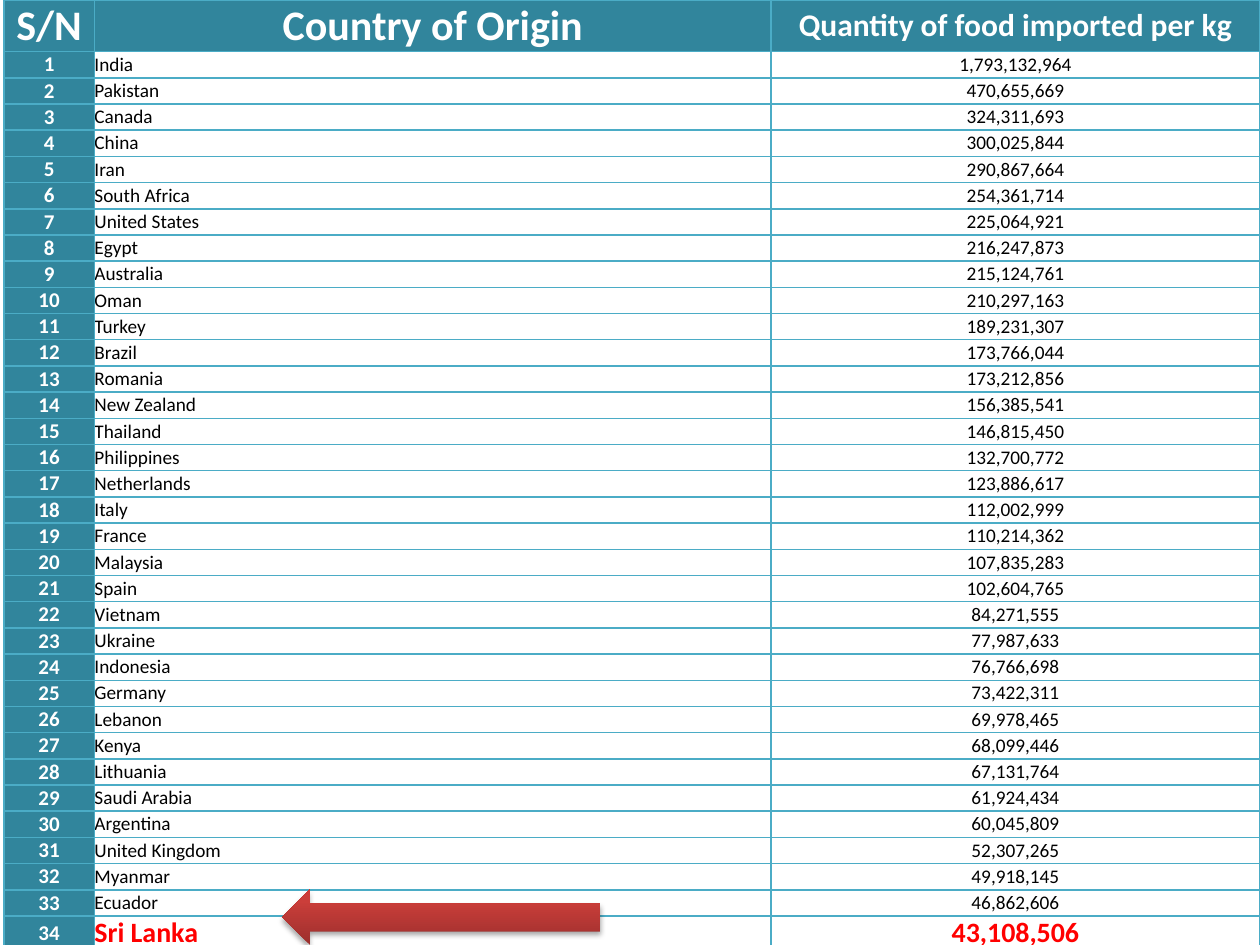
from dataclasses import dataclass

from pptx import Presentation
from pptx.dml.color import RGBColor
from pptx.enum.shapes import MSO_SHAPE
from pptx.enum.text import MSO_ANCHOR, PP_ALIGN
from pptx.oxml import parse_xml
from pptx.oxml.ns import nsdecls
from pptx.slide import Slide
from pptx.table import _Cell
from pptx.util import Inches, Pt

LEFT_ARROW = MSO_SHAPE.LEFT_ARROW
MIDDLE = MSO_ANCHOR.MIDDLE
LEFT, CENTER = PP_ALIGN.LEFT, PP_ALIGN.CENTER

FONT = "Calibri"
BLANK_LAYOUT = 6
COLORS = {
    "header": "31859C",
    "border": "4BACC6",
    "white": "FFFFFF",
    "black": "000000",
    "highlight": "FF0000",
}
ARROW_STOPS = {0: "9C2F2D", 80: "CB3E3A", 100: "CE3B37"}


@dataclass(frozen=True)
class CellStyle:
    size: int
    color: str
    bold: bool = False
    fill: str | None = None
    right_to_left: bool = False


@dataclass(frozen=True)
class Import:
    country: str
    kilograms: int


LARGE_HEADER = CellStyle(24, "white", True, "header", True)
SMALL_HEADER = CellStyle(18, "white", True, "header", True)
NUMBER = CellStyle(12, "white", True, "header")
BODY = CellStyle(11, "black")
HIGHLIGHT = CellStyle(16, "highlight", True)

HEADERS = [
    ("S/N", LARGE_HEADER),
    ("Country of Origin", LARGE_HEADER),
    ("Quantity of food imported per kg", SMALL_HEADER),
]
IMPORTS = [
    Import("India", 1793132964),
    Import("Pakistan", 470655669),
    Import("Canada", 324311693),
    Import("China", 300025844),
    Import("Iran", 290867664),
    Import("South Africa", 254361714),
    Import("United States", 225064921),
    Import("Egypt", 216247873),
    Import("Australia", 215124761),
    Import("Oman", 210297163),
    Import("Turkey", 189231307),
    Import("Brazil", 173766044),
    Import("Romania", 173212856),
    Import("New Zealand", 156385541),
    Import("Thailand", 146815450),
    Import("Philippines", 132700772),
    Import("Netherlands", 123886617),
    Import("Italy", 112002999),
    Import("France", 110214362),
    Import("Malaysia", 107835283),
    Import("Spain", 102604765),
    Import("Vietnam", 84271555),
    Import("Ukraine", 77987633),
    Import("Indonesia", 76766698),
    Import("Germany", 73422311),
    Import("Lebanon", 69978465),
    Import("Kenya", 68099446),
    Import("Lithuania", 67131764),
    Import("Saudi Arabia", 61924434),
    Import("Argentina", 60045809),
    Import("United Kingdom", 52307265),
    Import("Myanmar", 49918145),
    Import("Ecuador", 46862606),
    Import("Sri Lanka", 43108506),
]
HIGHLIGHTED_COUNTRY = "Sri Lanka"

COLUMN_WIDTHS = [Inches(0.72), Inches(5.37), Inches(3.88)]
HEADER_HEIGHT = Inches(0.41)
BODY_HEIGHT = Inches(6.87)
HIGHLIGHT_HEIGHT = Inches(0.27)


def add_borders(cell: _Cell) -> None:
    properties = cell._tc.get_or_add_tcPr()
    for side in ("lnL", "lnR", "lnT", "lnB"):
        properties.append(parse_xml(
            f'<a:{side} {nsdecls("a")} w="{Pt(1)}"><a:solidFill>'
            f'<a:srgbClr val="{COLORS["border"]}"/></a:solidFill></a:{side}>'
        ))


def fill_cell(cell: _Cell, text: str, style: CellStyle, alignment: PP_ALIGN = CENTER) -> None:
    cell.margin_left = cell.margin_right = cell.margin_top = cell.margin_bottom = 0
    cell.vertical_anchor = MIDDLE
    add_borders(cell)
    if style.fill:
        cell.fill.solid()
        cell.fill.fore_color.rgb = RGBColor.from_string(COLORS[style.fill])
    else:
        cell.fill.background()
    cell.text = text
    paragraph = cell.text_frame.paragraphs[0]
    paragraph.alignment = alignment
    if style.right_to_left:
        paragraph._p.get_or_add_pPr().set("rtl", "1")
    font = paragraph.font
    font.name = FONT
    font.size = Pt(style.size)
    font.bold = style.bold
    font.color.rgb = RGBColor.from_string(COLORS[style.color])
    # Table text takes its look from the runs in some viewers
    run_font = paragraph.runs[0].font
    run_font.name, run_font.size, run_font.bold = font.name, font.size, font.bold
    run_font.color.rgb = font.color.rgb


def add_import_table(slide: Slide) -> None:
    frame = slide.shapes.add_table(
        len(IMPORTS) + 1, len(HEADERS), Inches(0.03), 0, sum(COLUMN_WIDTHS),
        HEADER_HEIGHT + BODY_HEIGHT + HIGHLIGHT_HEIGHT,
    )
    table = frame.table
    table.horz_banding = False
    for column, width in zip(table.columns, COLUMN_WIDTHS):
        column.width = width

    table.rows[0].height = HEADER_HEIGHT
    for column, (text, style) in enumerate(HEADERS):
        fill_cell(table.cell(0, column), text, style)

    row_height = BODY_HEIGHT // (len(IMPORTS) - 1)
    for row, item in enumerate(IMPORTS, start=1):
        highlighted = item.country == HIGHLIGHTED_COUNTRY
        style = HIGHLIGHT if highlighted else BODY
        table.rows[row].height = HIGHLIGHT_HEIGHT if highlighted else row_height
        fill_cell(table.cell(row, 0), str(row), NUMBER)
        fill_cell(table.cell(row, 1), item.country, style, LEFT)
        fill_cell(table.cell(row, 2), f"{item.kilograms:,}", style)


def add_highlight_arrow(slide: Slide) -> None:
    arrow = slide.shapes.add_shape(
        LEFT_ARROW, Inches(2.24), Inches(7.06), Inches(2.52), Inches(0.44)
    )
    properties = arrow._element.spPr
    stops = "".join(
        f'<a:gs pos="{position * 1000}"><a:srgbClr val="{color}"/></a:gs>'
        for position, color in ARROW_STOPS.items()
    )
    properties.append(parse_xml(
        f'<a:gradFill {nsdecls("a")} rotWithShape="1"><a:gsLst>{stops}</a:gsLst>'
        f'<a:lin ang="{270 * 60000}" scaled="0"/></a:gradFill>'
    ))
    arrow.line.fill.background()
    properties.append(parse_xml(
        f'<a:effectLst {nsdecls("a")}><a:outerShdw blurRad="{Pt(3.1)}" '
        f'dist="{Pt(1.8)}" dir="{90 * 60000}" rotWithShape="0">'
        f'<a:srgbClr val="{COLORS["black"]}"><a:alpha val="35000"/></a:srgbClr>'
        '</a:outerShdw></a:effectLst>'
    ))


def main() -> None:
    presentation = Presentation()
    presentation.slide_width = Inches(10)
    presentation.slide_height = Inches(7.5)
    slide = presentation.slides.add_slide(presentation.slide_layouts[BLANK_LAYOUT])
    add_import_table(slide)
    add_highlight_arrow(slide)
    presentation.save("out.pptx")


if __name__ == "__main__":
    main()
